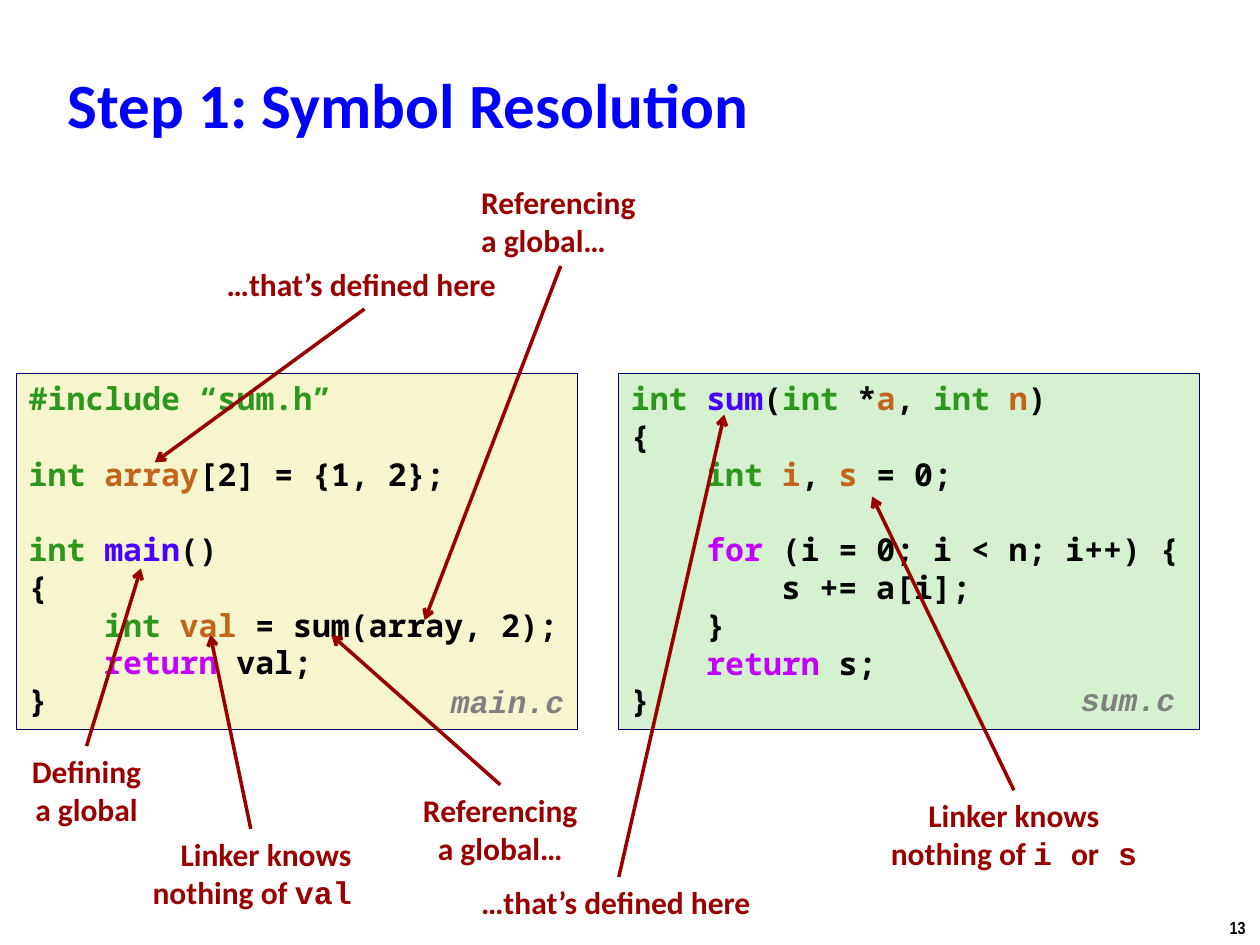
from dataclasses import dataclass

from lxml import etree
from pptx import Presentation
from pptx.dml.color import RGBColor
from pptx.enum.shapes import MSO_CONNECTOR, MSO_SHAPE
from pptx.enum.text import MSO_ANCHOR, PP_ALIGN
from pptx.oxml.ns import qn
from pptx.util import Cm, Pt

STRAIGHT = MSO_CONNECTOR.STRAIGHT
RECTANGLE = MSO_SHAPE.RECTANGLE
TOP, MIDDLE = MSO_ANCHOR.TOP, MSO_ANCHOR.MIDDLE
LEFT, CENTER, RIGHT = PP_ALIGN.LEFT, PP_ALIGN.CENTER, PP_ALIGN.RIGHT
TOP_SIDE, BOTTOM_SIDE = 0, 2


@dataclass(frozen=True)
class Theme:
    title: str = "0000FF"
    note: str = "990000"
    border: str = "000066"
    main_fill: str = "F7F5CD"
    sum_fill: str = "D5F1CF"
    file_name: str = "808080"
    plain: str = "000000"
    keyword: str = "2D961E"
    variable: str = "C1651C"
    function: str = "4A00FF"
    flow: str = "C200FF"
    title_size: int = 36
    body_size: int = 18
    number_size: int = 10
    text_font: str = "Calibri"
    code_font: str = "Noto Sans Mono"
    mono_font: str = "Courier New"
    number_font: str = "Arial Narrow"
    code_line: float = 21.5
    code_indent: float = 1.52


THEME = Theme()
PLAIN, KEYWORD, VARIABLE = THEME.plain, THEME.keyword, THEME.variable
FUNCTION, FLOW = THEME.function, THEME.flow

# Each code line: indent level, blank lines before it, coloured spans.
MAIN_CODE = [
    (0, 0, [("#include “sum.h”", KEYWORD)]),
    (0, 1, [("int ", KEYWORD), ("array", VARIABLE), ("[2] = {1, 2};", PLAIN)]),
    (0, 1, [("int ", KEYWORD), ("main", FUNCTION), ("()", PLAIN)]),
    (0, 0, [("{", PLAIN)]),
    (1, 0, [("int ", KEYWORD), ("val", VARIABLE), (" = sum(array, 2);", PLAIN)]),
    (1, 0, [("return", FLOW), (" val;", PLAIN)]),
    (0, 0, [("}", PLAIN)]),
]
SUM_CODE = [
    (0, 0, [("int ", KEYWORD), ("sum", FUNCTION), ("(", PLAIN), ("int", KEYWORD),
            (" *", PLAIN), ("a", VARIABLE), (", ", PLAIN), ("int ", KEYWORD),
            ("n", VARIABLE), (")", PLAIN)]),
    (0, 0, [("{", PLAIN)]),
    (1, 0, [("int ", KEYWORD), ("i", VARIABLE), (", ", PLAIN), ("s", VARIABLE),
            (" = 0;", PLAIN)]),
    (1, 1, [("for", FLOW), (" (i = 0; i < n; i++) {", PLAIN)]),
    (2, 0, [("s += a[i];", PLAIN)]),
    (1, 0, [("}", PLAIN)]),
    (1, 0, [("return", FLOW), (" s;", PLAIN)]),
    (0, 0, [("}", PLAIN)]),
]

TEXT, MONO = THEME.text_font, THEME.mono_font
REFERENCING = [[("Referencing", TEXT)], [("a global…", TEXT)]]
DEFINED_HERE = [[("…that’s defined here", TEXT)]]
DEFINING = [[("Defining", TEXT)], [("a global", TEXT)]]
KNOWS_NO_VAL = [[("Linker knows", TEXT)], [("nothing of ", TEXT), ("val", MONO)]]
KNOWS_NO_LOCALS = [[("Linker knows", TEXT)],
                   [("nothing of ", TEXT), ("i ", MONO), ("or", TEXT), (" s", MONO)]]

# Each note: lines, left, top, width, height, alignment, arrow side, arrow tip.
NOTES = [
    (REFERENCING, 9.45, 3.56, 3.71, 1.8, LEFT, BOTTOM_SIDE, (8.56, 12.5)),
    (DEFINING, 0.36, 15.04, 2.77, 1.8, CENTER, TOP_SIDE, (2.84, 11.46)),
    (KNOWS_NO_VAL, 2.77, 16.71, 4.57, 1.8, RIGHT, TOP_SIDE, (4.24, 12.8)),
    (REFERENCING, 8.23, 15.82, 3.71, 1.8, CENTER, TOP_SIDE, (6.68, 12.8)),
    (DEFINED_HERE, 9.45, 17.68, 6.05, 1.02, LEFT, TOP_SIDE, (14.6, 8.36)),
    (KNOWS_NO_LOCALS, 17.58, 15.93, 5.72, 1.8, CENTER, TOP_SIDE, (17.58, 10.01)),
    (DEFINED_HERE, 4.32, 5.21, 6.05, 1.02, LEFT, BOTTOM_SIDE, (3.12, 9.32)),
]


def add_span(para, text, font, size, colour, italic=False):
    span = para.add_run()
    span.text = text
    span.font.name = font
    span.font.size = Pt(size)
    span.font.bold = True
    span.font.italic = italic
    span.font.color.rgb = RGBColor.from_string(colour)


def paragraphs(frame, count):
    return [frame.paragraphs[0]] + [frame.add_paragraph() for _ in range(count - 1)]


def add_box(page, left, top, width, height, anchor=TOP):
    box = page.shapes.add_textbox(Cm(left), Cm(top), Cm(width), Cm(height))
    box.text_frame.word_wrap = False
    box.text_frame.vertical_anchor = anchor
    return box


def add_label(page, text, place, font, size, colour, italic=False, anchor=TOP):
    box = add_box(page, *place, anchor)
    add_span(box.text_frame.paragraphs[0], text, font, size, colour, italic)
    return box


def add_code_panel(page, code, left, width, fill):
    panel = page.shapes.add_shape(RECTANGLE, Cm(left), Cm(7.52), Cm(width), Cm(7.19))
    panel.shadow.inherit = False
    panel.fill.solid()
    panel.fill.fore_color.rgb = RGBColor.from_string(fill)
    panel.line.color.rgb = RGBColor.from_string(THEME.border)
    panel.line.width = Pt(0.25)
    frame = panel.text_frame
    frame.word_wrap = True
    frame.vertical_anchor = TOP
    for para, (level, blanks, spans) in zip(paragraphs(frame, len(code)), code):
        para.alignment = LEFT
        para.space_before = Pt(blanks * THEME.code_line)
        properties = para._p.get_or_add_pPr()
        properties.set("marL", str(Cm(level * THEME.code_indent)))
        properties.set("indent", "0")
        for text, colour in spans:
            add_span(para, text, THEME.code_font, THEME.body_size, colour)


def add_file_name(page, name, place):
    box = add_label(page, name, place, MONO, THEME.body_size, THEME.file_name, True)
    box.text_frame.paragraphs[0].line_spacing = 0.94


def add_arrow(page, box, side, tip):
    arrow = page.shapes.add_connector(STRAIGHT, 0, 0, Cm(tip[0]), Cm(tip[1]))
    arrow.begin_connect(box, side)
    arrow.line.color.rgb = RGBColor.from_string(THEME.note)
    arrow.line.width = Pt(2)
    etree.SubElement(arrow.line._get_or_add_ln(), qn("a:tailEnd"), type="arrow")
    etree.SubElement(arrow._element.spPr, qn("a:effectLst"))


def add_note(page, lines, left, top, width, height, alignment, side, tip):
    box = add_box(page, left, top, width, height)
    for para, spans in zip(paragraphs(box.text_frame, len(lines)), lines):
        para.alignment = alignment
        for text, font in spans:
            add_span(para, text, font, THEME.body_size, THEME.note)
    add_arrow(page, box, side, tip)


def main():
    deck = Presentation()
    deck.slide_width, deck.slide_height = Cm(25.4), Cm(19.05)
    page = deck.slides.add_slide(deck.slide_layouts[6])
    add_label(page, "13", (24.54, 18.36, 0.86, 0.69),
              THEME.number_font, THEME.number_size, THEME.plain)
    title = add_label(page, "Step 1: Symbol Resolution", (1.12, 0.99, 24.21, 2.18),
                      TEXT, THEME.title_size, THEME.title, anchor=MIDDLE)
    title.text_frame.word_wrap = True
    add_code_panel(page, MAIN_CODE, 0.33, 11.3, THEME.main_fill)
    add_file_name(page, "main.c", (8.84, 13.69, 2.79, 0.99))
    add_code_panel(page, SUM_CODE, 12.47, 11.71, THEME.sum_fill)
    add_file_name(page, "sum.c", (21.54, 13.64, 2.59, 0.99))
    for note in NOTES:
        add_note(page, *note)
    deck.save("out.pptx")


if __name__ == "__main__":
    main()
